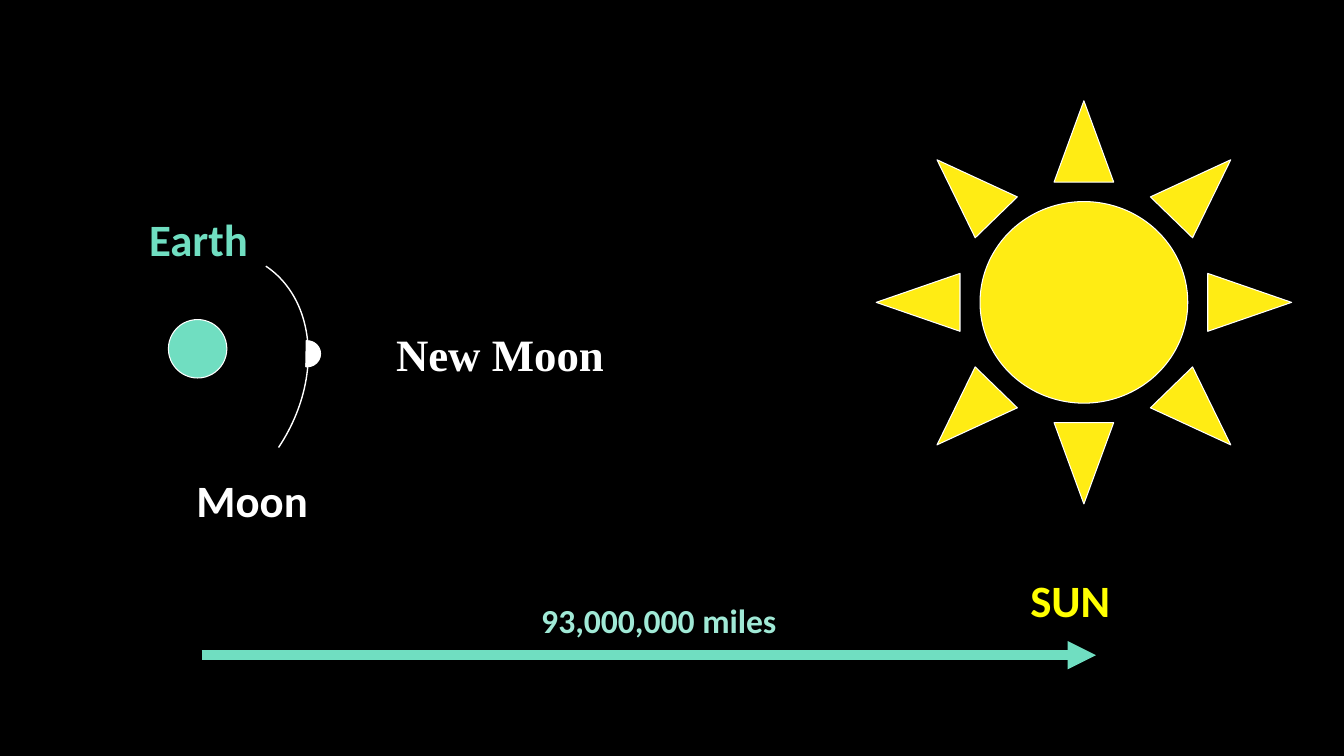
import pptx
import pptx.dml.color
import pptx.enum.shapes
import pptx.oxml
import pptx.oxml.ns
import pptx.util

Inches = pptx.util.Inches
Shape = pptx.enum.shapes.MSO_SHAPE
Color = pptx.dml.color.RGBColor

BLACK = Color(0x00, 0x00, 0x00)
WHITE = Color(0xFF, 0xFF, 0xFF)
SUN_YELLOW = Color(0xFF, 0xEC, 0x14)
LABEL_YELLOW = Color(0xFF, 0xFF, 0x00)
TEAL = Color(0x70, 0xDE, 0xC1)
PALE_TEAL = Color(0xA0, 0xE9, 0xD6)


def add_body(page, kind, bounds, fill=None, line=None, width=0.75, rotation=0):
    body = page.shapes.add_shape(kind, *map(Inches, bounds))
    body.shadow.inherit = False
    body.rotation = rotation
    if fill is None:
        body.fill.background()
    else:
        body.fill.solid()
        body.fill.fore_color.rgb = fill
    if line is None:
        body.line.fill.background()
    else:
        body.line.color.rgb = line
        body.line.width = pptx.util.Pt(width)
    return body


def add_label(page, text, bounds, color, size=32, name="Calibri"):
    box = page.shapes.add_textbox(*map(Inches, bounds))
    box.text_frame.word_wrap = True
    para = box.text_frame.paragraphs[0]
    span = para.add_run()
    span.text = text
    span.font.color.rgb = color
    formats = {"name": name, "size": pptx.util.Pt(size), "bold": True}
    for attribute, value in formats.items():
        setattr(span.font, attribute, value)


def add_arrow(page, start, end, color, width):
    arrow = page.shapes.add_connector(
        pptx.enum.shapes.MSO_CONNECTOR.STRAIGHT,
        *map(Inches, start + end),
    )
    arrow.line.color.rgb = color
    arrow.line.width = pptx.util.Pt(width)
    head = pptx.oxml.parse_xml(
        f'<a:tailEnd {pptx.oxml.ns.nsdecls("a")} type="triangle"/>'
    )
    arrow.line._get_or_add_ln().append(head)
    effects = pptx.oxml.parse_xml(f'<a:effectLst {pptx.oxml.ns.nsdecls("a")}/>')
    arrow._element.spPr.append(effects)


def add_sun(page):
    sun = add_body(page, Shape.SUN, (8.69, 1, 4.12, 4), SUN_YELLOW, WHITE)
    sun.adjustments[0] = 0.25
    add_label(page, "SUN", (10.12, 5.63, 2.32, 0.88), LABEL_YELLOW)


def add_earth(page):
    add_body(page, Shape.OVAL, (1.67, 3.17, 0.58, 0.58), TEAL, WHITE)
    add_label(page, "Earth", (1.38, 2.05, 1.79, 0.64), TEAL)


def add_distance(page):
    add_arrow(page, (2, 6.5), (10.87, 6.5), TEAL, 6.75)
    add_label(page, "93,000,000 miles", (5.27, 5.9, 3.5, 0.5), PALE_TEAL, size=24)


def add_moon(page):
    add_body(page, Shape.OVAL, (2.91, 3.38, 0.27, 0.26), WHITE, WHITE)
    add_body(page, Shape.ARC, (0.74, 2.4, 2.21, 2.85), line=WHITE, width=1, rotation=33.8)
    add_label(page, "Moon", (1.85, 4.64, 1.55, 0.64), WHITE)
    add_label(page, "New Moon", (3.83, 3.19, 3.17, 0.63), WHITE, name="Times New Roman")
    add_body(page, Shape.CHORD, (2.78, 3.32, 0.36, 0.37), BLACK, rotation=23.5)


def main():
    deck = pptx.Presentation()
    deck.slide_width = Inches(13.33)
    deck.slide_height = Inches(7.5)
    page = deck.slides.add_slide(deck.slide_layouts[6])
    page.background.fill.solid()
    page.background.fill.fore_color.rgb = BLACK
    add_sun(page)
    add_earth(page)
    add_distance(page)
    add_moon(page)
    deck.save("out.pptx")


if __name__ == "__main__":
    main()
